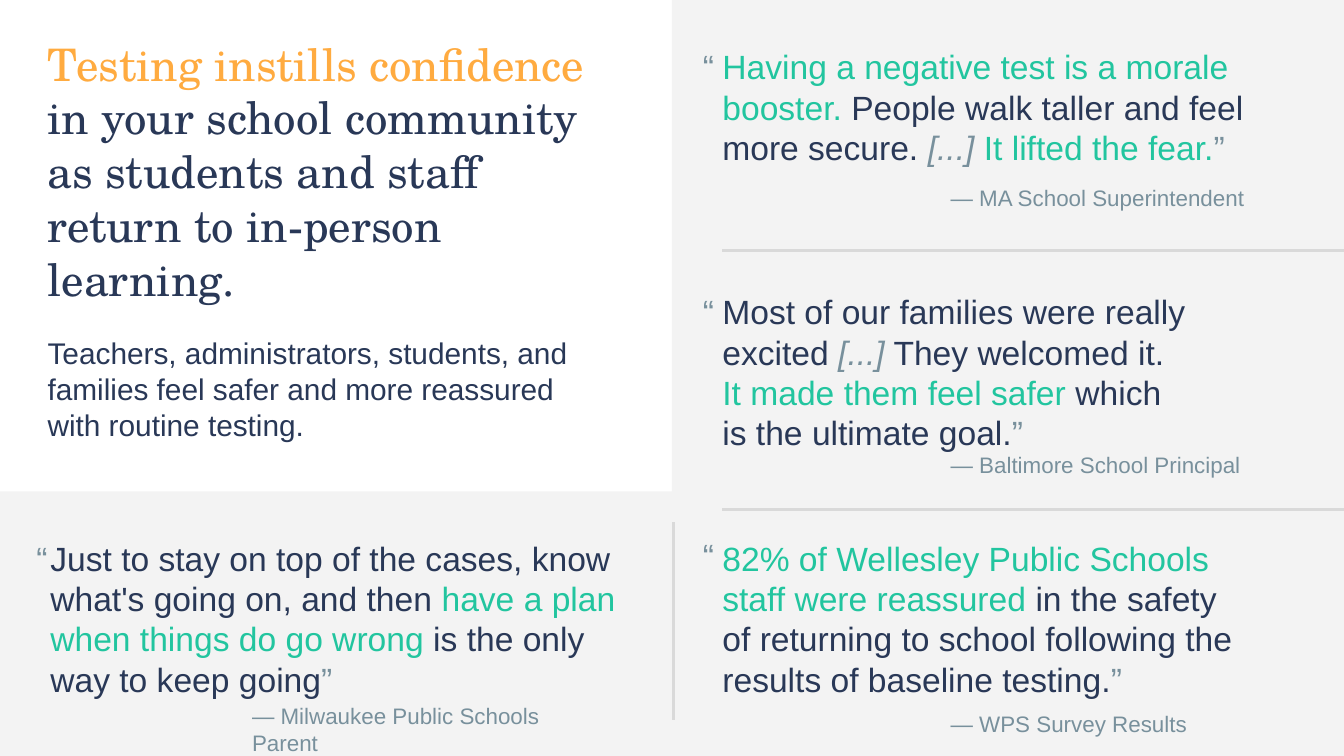
"""Build a slide of school testimonials about routine testing."""
from dataclasses import dataclass

from lxml import etree
from pptx import Presentation
from pptx import util as u
from pptx.dml.color import RGBColor
from pptx.enum import shapes, text
from pptx.oxml.ns import qn

PX = 9525
MIDDLE = text.MSO_ANCHOR.MIDDLE
TOP = text.MSO_ANCHOR.TOP


@dataclass(frozen=True)
class Theme:
    orange: str = "FFAB40"
    navy: str = "293857"
    green: str = "22C59F"
    slate: str = "78909C"
    panel: str = "F3F3F3"
    rule: str = "D9D9D9"
    heading_font: str = "TeX Gyre Schola"
    body_font: str = "Arial"
    heading_size: int = 24
    body_size: int = 16
    quote_size: int = 18
    source_size: int = 12
    rule_width: float = 1.5


THEME = Theme()


@dataclass(frozen=True)
class Box:
    left: int
    top: int
    width: int
    height: int

    def emu(self) -> list[int]:
        return [value * PX for value in (self.left, self.top, self.width, self.height)]


@dataclass(frozen=True)
class Run:
    words: str
    color: str = THEME.navy
    italic: bool = False


@dataclass(frozen=True)
class Block:
    runs: tuple[Run, ...]
    size: int
    font: str = THEME.body_font
    before: int = 0
    after: int = 0


@dataclass(frozen=True)
class Quote:
    box: Box
    mark: tuple[int, int]
    runs: tuple[Run, ...]
    source_box: Box
    source: str


CLOSING = Run("”", THEME.slate)
PANELS = (Box(480, 0, 480, 540), Box(0, 351, 487, 189))
RULES = ((960, 179, 516, 179), (960, 364, 516, 364), (481, 514, 481, 373))
INTRO_BOX = Box(24, 44, 429, 254)
INTRO = (
    Block((
        Run("Testing instills confidence", THEME.orange),
        Run(" in your school community as students and staff return to in-person learning."),
    ), THEME.heading_size, THEME.heading_font),
    Block((
        Run("Teachers, administrators, students, and families feel safer and more reassured\n"
            "with routine testing."),
    ), THEME.body_size, before=16),
)
QUOTES = (
    Quote(Box(506, 23, 413, 108), (492, 23), (
        Run("Having a negative test is a morale booster.", THEME.green),
        Run(" People walk taller and feel more secure. "),
        Run("[...] ", THEME.slate, True),
        Run("It lifted the fear.", THEME.green),
        CLOSING,
    ), Box(669, 122, 273, 38), "— MA School Superintendent"),
    Quote(Box(506, 198, 413, 117), (492, 198), (
        Run("Most of our families were really excited "),
        Run("[...]", THEME.slate, True),
        Run(" They welcomed it.\n"),
        Run("It made them feel safer", THEME.green),
        Run(" which\nis the ultimate goal."),
        CLOSING,
    ), Box(669, 313, 273, 38), "— Baltimore School Principal"),
    Quote(Box(506, 374, 413, 108), (492, 372), (
        Run("82% of Wellesley Public Schools staff were reassured", THEME.green),
        Run(" in the safety of returning to school following the results of baseline testing."),
        CLOSING,
    ), Box(669, 498, 273, 38), "— WPS Survey Results"),
    Quote(Box(26, 374, 444, 117), (16, 374), (
        Run("Just to stay on top of the cases, know what's going on, and then "),
        Run("have a plan when things do go wrong", THEME.green),
        Run(" is the only way to keep going"),
        CLOSING,
    ), Box(170, 502, 282, 38), "— Milwaukee Public Schools Parent"),
)


def apply(target, formats: dict) -> None:
    for name, value in formats.items():
        setattr(target, name, value)


def add_run(paragraph, run: Run, block: Block) -> None:
    for index, line in enumerate(run.words.split("\n")):
        if index:
            paragraph.add_line_break()
        if line:
            piece = paragraph.add_run()
            piece.text = line
            apply(piece.font, {"name": block.font, "size": u.Pt(block.size), "italic": run.italic})
            piece.font.color.rgb = RGBColor.from_string(run.color)


def add_text(slide, box: Box, blocks: tuple[Block, ...], anchor=TOP) -> None:
    frame = slide.shapes.add_textbox(*box.emu()).text_frame
    apply(frame, {
        "word_wrap": True, "vertical_anchor": anchor,
        "margin_left": 10 * PX, "margin_top": 10 * PX,
        "margin_right": 24 * PX, "margin_bottom": 10 * PX,
    })
    for index, block in enumerate(blocks):
        paragraph = frame.add_paragraph() if index else frame.paragraphs[0]
        apply(paragraph, {"space_before": u.Pt(block.before), "space_after": u.Pt(block.after)})
        for run in block.runs:
            add_run(paragraph, run, block)


def add_panel(slide, box: Box) -> None:
    shape = slide.shapes.add_shape(shapes.MSO_SHAPE.RECTANGLE, *box.emu())
    shape.shadow.inherit = False
    shape.fill.solid()
    shape.fill.fore_color.rgb = RGBColor.from_string(THEME.panel)
    shape.line.fill.background()


def add_rule(slide, ends: tuple[int, int, int, int]) -> None:
    points = [value * PX for value in ends]
    connector = slide.shapes.add_connector(shapes.MSO_CONNECTOR.STRAIGHT, *points)
    connector.line.color.rgb = RGBColor.from_string(THEME.rule)
    connector.line.width = u.Pt(THEME.rule_width)
    etree.SubElement(connector._element.spPr, qn("a:effectLst"))


def add_quote(slide, quote: Quote) -> None:
    opening = Block((Run("“", THEME.slate),), THEME.quote_size)
    source = Block((Run(quote.source, THEME.slate),), THEME.source_size, after=10)
    add_text(slide, quote.box, (Block(quote.runs, THEME.quote_size),))
    add_text(slide, Box(*quote.mark, 51, 108), (opening,))
    add_text(slide, quote.source_box, (source,), MIDDLE)


def main() -> None:
    presentation = Presentation()
    apply(presentation, {"slide_width": 960 * PX, "slide_height": 540 * PX})
    slide = presentation.slides.add_slide(presentation.slide_layouts[6])
    for box in PANELS:
        add_panel(slide, box)
    for ends in RULES:
        add_rule(slide, ends)
    add_text(slide, INTRO_BOX, INTRO, MIDDLE)
    for quote in QUOTES:
        add_quote(slide, quote)
    presentation.save("out.pptx")


if __name__ == "__main__":
    main()
